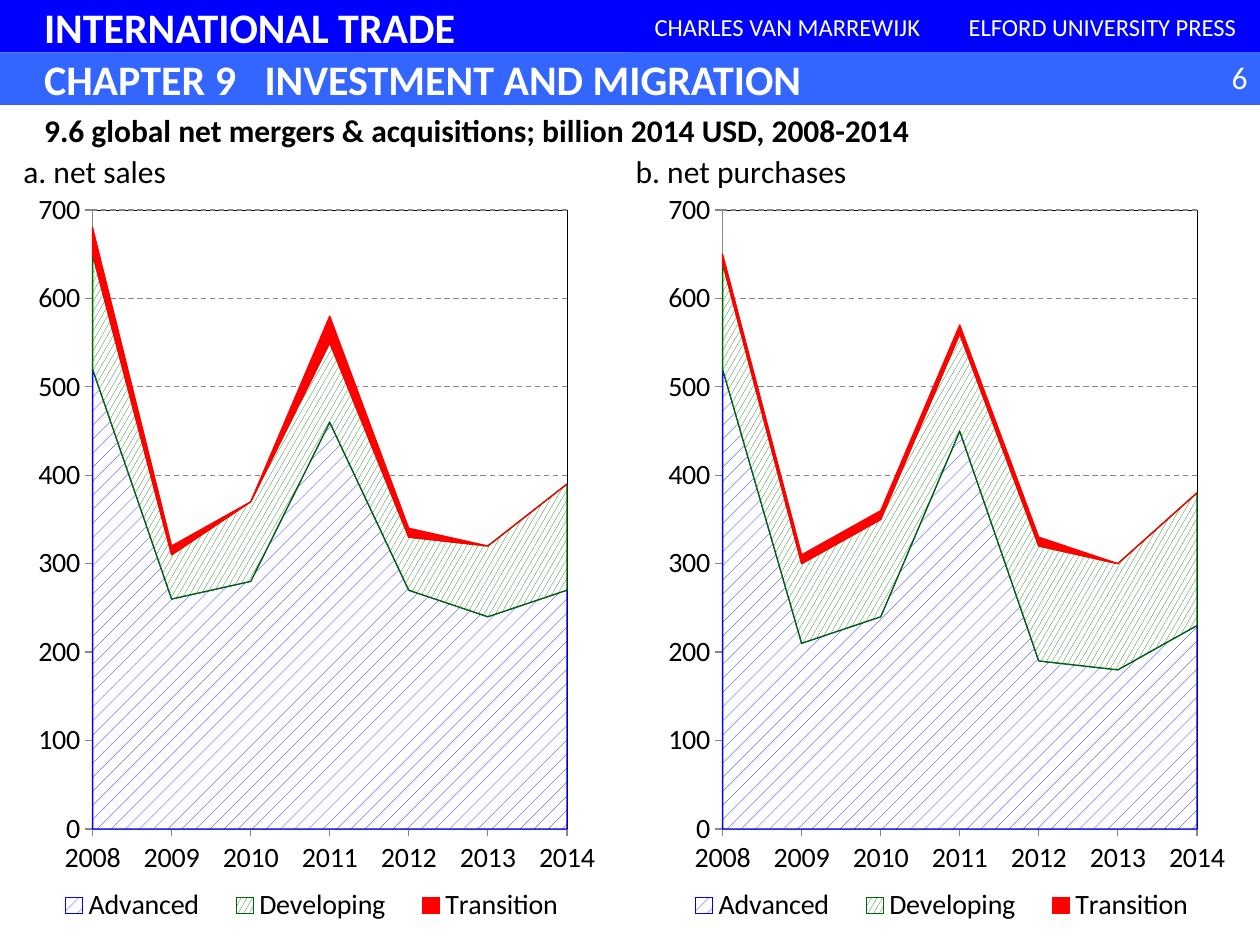
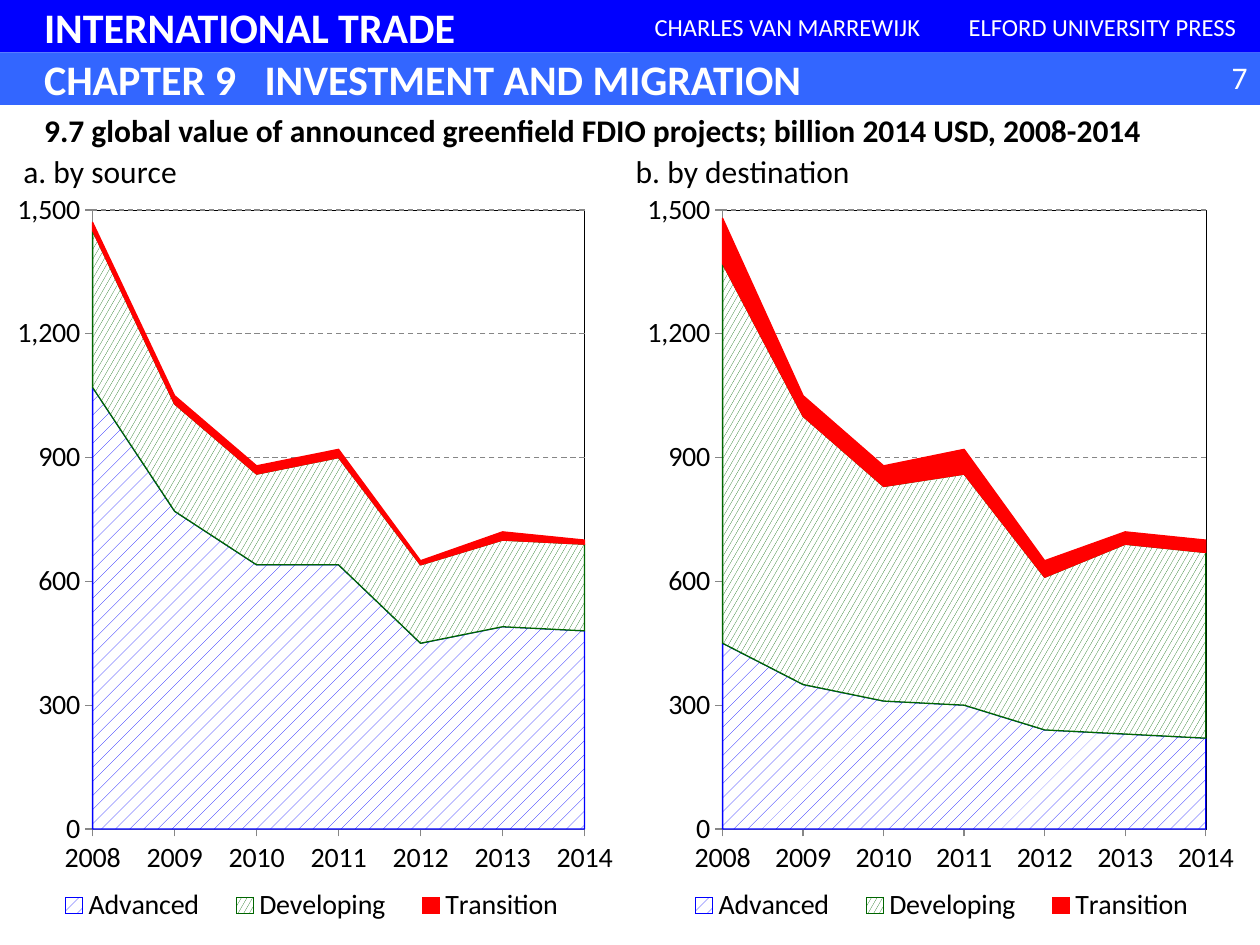
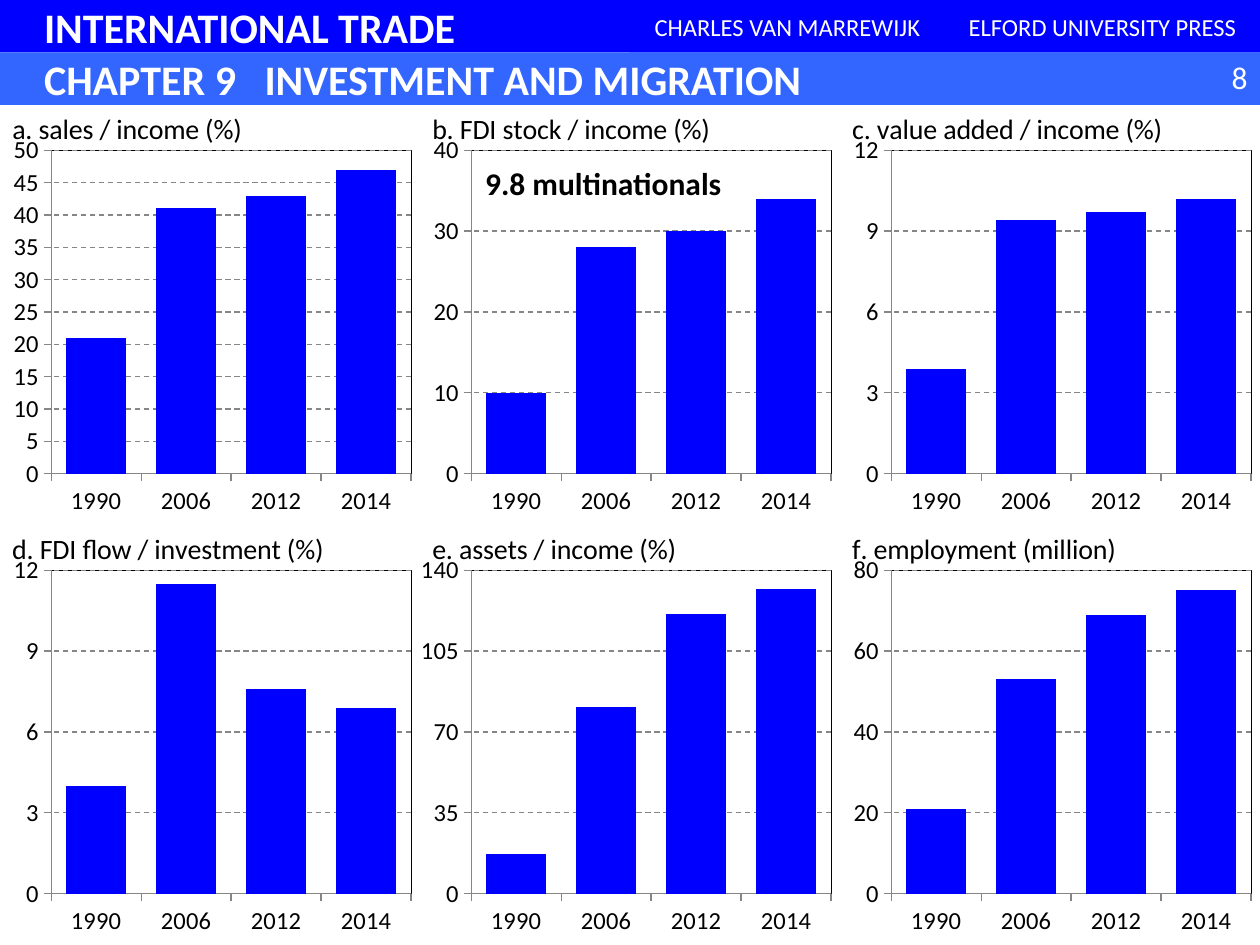
from pptx import Presentation
from pptx.chart.data import CategoryChartData
from pptx.dml.color import RGBColor
from pptx.enum.chart import XL_CHART_TYPE as ChartType, XL_LEGEND_POSITION as LegendPosition
from pptx.enum.chart import XL_TICK_MARK as TickMark
from pptx.enum.dml import MSO_LINE as LineStyle, MSO_PATTERN as Pattern
from pptx.enum.shapes import MSO_SHAPE as Shape
from pptx.enum.text import MSO_ANCHOR as Anchor, MSO_AUTO_SIZE as AutoSize, PP_ALIGN as Align
from pptx.oxml import parse_xml
from pptx.oxml.ns import nsdecls
from pptx.util import Inches, Pt

COLORS = {name: RGBColor.from_string(value) for name, value in {
    "band": "0000FF", "chapter": "3366FF", "white": "FFFFFF", "black": "000000",
    "axis": "868686", "advanced": "0000FF", "developing": "006600", "transition": "FF0000",
}.items()}
FONT = "Calibri"
WIDTH, HEIGHT = 10, 7.5
BAND = HEIGHT / 18
TOP = 2 * BAND
FIRST_NUMBER = 6


def write_text(shape, text, size, color, bold=False, align=Align.LEFT, anchor=Anchor.MIDDLE):
    frame = shape.text_frame
    frame.word_wrap = True
    frame.auto_size = AutoSize.NONE
    frame.vertical_anchor = anchor
    paragraph = frame.paragraphs[0]
    paragraph.alignment = align
    run = paragraph.add_run()
    run.text = text
    run.font.name = FONT
    run.font.size = Pt(size)
    run.font.bold = bold
    run.font.color.rgb = COLORS[color]


def add_chart(slide, kind, box, title, categories, series, top_value, step, sizes,
              title_percent, plot_percent, legend_percent=None):
    chart_data = CategoryChartData()
    chart_data.categories = categories
    for name, values in series:
        chart_data.add_series(name, values)
    chart = slide.shapes.add_chart(kind, *map(Inches, box), chart_data).chart
    title_size, label_size = sizes
    chart.font.name = FONT
    chart.font.size = Pt(label_size)
    chart.font.color.rgb = COLORS["black"]
    chart.plots[0].vary_by_categories = False

    run = chart.chart_title.text_frame.paragraphs[0].add_run()
    run.text = title
    run.font.name = FONT
    run.font.size = Pt(title_size)
    run.font.bold = False
    run.font.color.rgb = COLORS["black"]

    values_axis = chart.value_axis
    values_axis.minimum_scale = 0
    values_axis.maximum_scale = top_value
    values_axis.major_unit = step
    values_axis.tick_labels.number_format = "#,##0"
    values_axis.tick_labels.number_format_is_linked = False
    gridlines = values_axis.major_gridlines.format.line
    gridlines.dash_style = LineStyle.DASH
    for line in (gridlines, values_axis.format.line, chart.category_axis.format.line):
        line.color.rgb = COLORS["axis"]
        line.width = Pt(0.75)
    for axis in (values_axis, chart.category_axis):
        axis.major_tick_mark = TickMark.OUTSIDE
        axis.minor_tick_mark = TickMark.NONE
        axis.tick_labels.font.size = Pt(label_size)

    plot_area = chart.element.xpath("c:chart/c:plotArea")[0]
    placements = [
        (chart.chart_title.element, 1, "", title_percent),
        (plot_area, 0, '<c:layoutTarget val="inner"/>', plot_percent),
    ]
    chart.has_legend = legend_percent is not None
    if chart.has_legend:
        chart.legend.position = LegendPosition.BOTTOM
        chart.legend.include_in_layout = False
        chart.legend.font.size = Pt(label_size)
        placements.append((chart.element.xpath("c:chart/c:legend")[0], 1, "", legend_percent))
    for parent, index, target, percents in placements:
        for layout in parent.xpath("c:layout"):
            parent.remove(layout)
        modes = "".join(f'<c:{side}Mode val="edge"/>' for side in "xy")
        places = "".join(f'<c:{side} val="{value / 100:.3f}"/>'
                         for side, value in zip("xywh", percents))
        parent.insert(index, parse_xml(
            f'<c:layout {nsdecls("c")}><c:manualLayout>{target}{modes}{places}'
            "</c:manualLayout></c:layout>"))
    plot_area.append(parse_xml(
        f'<c:spPr {nsdecls("c", "a")}><a:noFill/><a:ln w="{Pt(0.25)}"><a:solidFill>'
        f'<a:srgbClr val="{COLORS["black"]}"/></a:solidFill></a:ln></c:spPr>'))
    chart.element.xpath("c:chart")[0].addnext(parse_xml(
        f'<c:spPr {nsdecls("c", "a")}><a:noFill/><a:ln><a:noFill/></a:ln></c:spPr>'))
    return chart


presentation = Presentation()
presentation.slide_width = Inches(WIDTH)
presentation.slide_height = Inches(HEIGHT)

TITLES = [
    ("9.6 global net mergers & acquisitions; billion 2014 USD, 2008-2014", (0.25, 0.83, 9.5, 0.4)),
    ("9.7 global value of announced greenfield FDIO projects; billion 2014 USD, 2008-2014",
     (0.25, 0.83, 9.5, 0.4)),
    ("9.8 multinationals", (3.75, 1.25, 2.2, 0.4)),
]
BANDS = [
    ("INTERNATIONAL TRADE", (0, 0, WIDTH, BAND), "band", 24, Align.LEFT),
    ("CHARLES VAN MARREWIJK", (WIDTH / 2, 0, WIDTH / 4, BAND), "band", 14, Align.CENTER),
    ("ELFORD UNIVERSITY PRESS", (WIDTH * 3 / 4, 0, WIDTH / 4, BAND), "band", 14, Align.CENTER),
    ("CHAPTER 9\tINVESTMENT AND MIGRATION", (0, BAND, WIDTH, BAND), "chapter", 24, Align.LEFT),
]

slides = []
for number, (title, title_box) in enumerate(TITLES, FIRST_NUMBER):
    slide = presentation.slides.add_slide(presentation.slide_layouts[5])
    slides.append(slide)
    placeholder = slide.shapes.title
    placeholder.left, placeholder.top, placeholder.width, placeholder.height = map(Inches, title_box)
    write_text(placeholder, title, 18, "black", bold=True, anchor=Anchor.TOP)
    for text, box, color, size, align in BANDS:
        band = slide.shapes.add_shape(Shape.RECTANGLE, *map(Inches, box))
        band.shadow.inherit = False
        band.fill.solid()
        band.fill.fore_color.rgb = COLORS[color]
        band.line.fill.background()
        write_text(band, text, size, "white", bold=align == Align.LEFT, align=align)
        if align == Align.LEFT:
            band.text_frame.margin_left = Inches(0.35)
            band.element.xpath(".//a:pPr")[0].append(parse_xml(
                f'<a:tabLst {nsdecls("a")}><a:tab pos="{Inches(1.75)}" algn="l"/></a:tabLst>'))
    number_box = slide.shapes.add_textbox(*map(Inches, (9.33, 0.41, 0.67, 0.4)))
    write_text(number_box, str(number), 18, "white", align=Align.RIGHT, anchor=Anchor.TOP)

YEARS = [str(year) for year in range(2008, 2015)]
GROUPS = ["Advanced", "Developing", "Transition"]
PATTERNS = {"Advanced": Pattern.PERCENT_10, "Developing": Pattern.LARGE_CONFETTI}
AREA_CHARTS = [
    (0, 0, "a. net sales", 700, 100, 2.8, 75.3,
     [(520, 260, 280, 460, 270, 240, 270), (130, 50, 90, 90, 60, 80, 120), (30, 10, 0, 30, 10, 0, 0)]),
    (0, 1, "b. net purchases", 700, 100, 0, 75.3,
     [(520, 210, 240, 450, 190, 180, 230), (120, 90, 110, 110, 130, 120, 150),
      (10, 10, 10, 10, 10, 0, 0)]),
    (1, 0, "a. by source", 1500, 300, 2.8, 78.1,
     [(1070, 770, 640, 640, 450, 490, 480), (380, 260, 220, 260, 190, 210, 210),
      (20, 20, 20, 20, 10, 20, 10)]),
    (1, 1, "b. by destination", 1500, 300, 0, 76.7,
     [(450, 350, 310, 300, 240, 230, 220), (920, 650, 520, 560, 370, 460, 450),
      (110, 50, 50, 60, 40, 30, 30)]),
]
for slide_index, column, title, top_value, step, title_left, plot_width, values in AREA_CHARTS:
    box = (column * WIDTH / 2, TOP, WIDTH / 2, HEIGHT - TOP)
    chart = add_chart(slides[slide_index], ChartType.AREA_STACKED, box, title, YEARS,
                      zip(GROUPS, values), top_value, step, (18, 16),
                      (title_left, 4.6), (14.7, 12.5, plot_width, 73.7), (6, 92.8, 87, 5))
    chart.element.xpath(".//c:crossBetween")[0].set("val", "midCat")
    for series in chart.plots[0].series:
        color = COLORS[series.name.lower()]
        fill = series.format.fill
        if series.name in PATTERNS:
            fill.patterned()
            fill.pattern = PATTERNS[series.name]
            fill.back_color.rgb = COLORS["white"]
        else:
            fill.solid()
        fill.fore_color.rgb = color
        series.format.line.color.rgb = color
        series.format.line.width = Pt(0.75)

COLUMN_CHARTS = [
    ("a. sales / income (%)", 50, 5, (21, 41, 43, 47)),
    ("b. FDI stock / income (%)", 40, 10, (10, 28, 30, 34)),
    ("c. value added / income (%)", 12, 3, (3.9, 9.4, 9.7, 10.2)),
    ("d. FDI flow / investment (%)", 12, 3, (4, 11.5, 7.6, 6.9)),
    ("e. assets / income (%)", 140, 35, (17, 81, 121, 132)),
    ("f. employment (million)", 80, 20, (21, 53, 69, 75)),
]
CELL = WIDTH / 3
for index, (title, top_value, step, values) in enumerate(COLUMN_CHARTS):
    row, column = divmod(index, 3)
    box = (column * CELL, TOP + row * CELL, CELL, CELL)
    chart = add_chart(slides[2], ChartType.COLUMN_CLUSTERED, box, title,
                      ["1990", "2006", "2012", "2014"], [("Series 1", values)], top_value, step,
                      (16, 14), (1.7, 0), (12.2, 10.8, 85.7, 77))
    chart.plots[0].gap_width = 51
    fill = chart.plots[0].series[0].format.fill
    fill.solid()
    fill.fore_color.rgb = COLORS["band"]

title_element = slides[2].shapes.title.element
title_element.getparent().append(title_element)

presentation.save("out.pptx")
